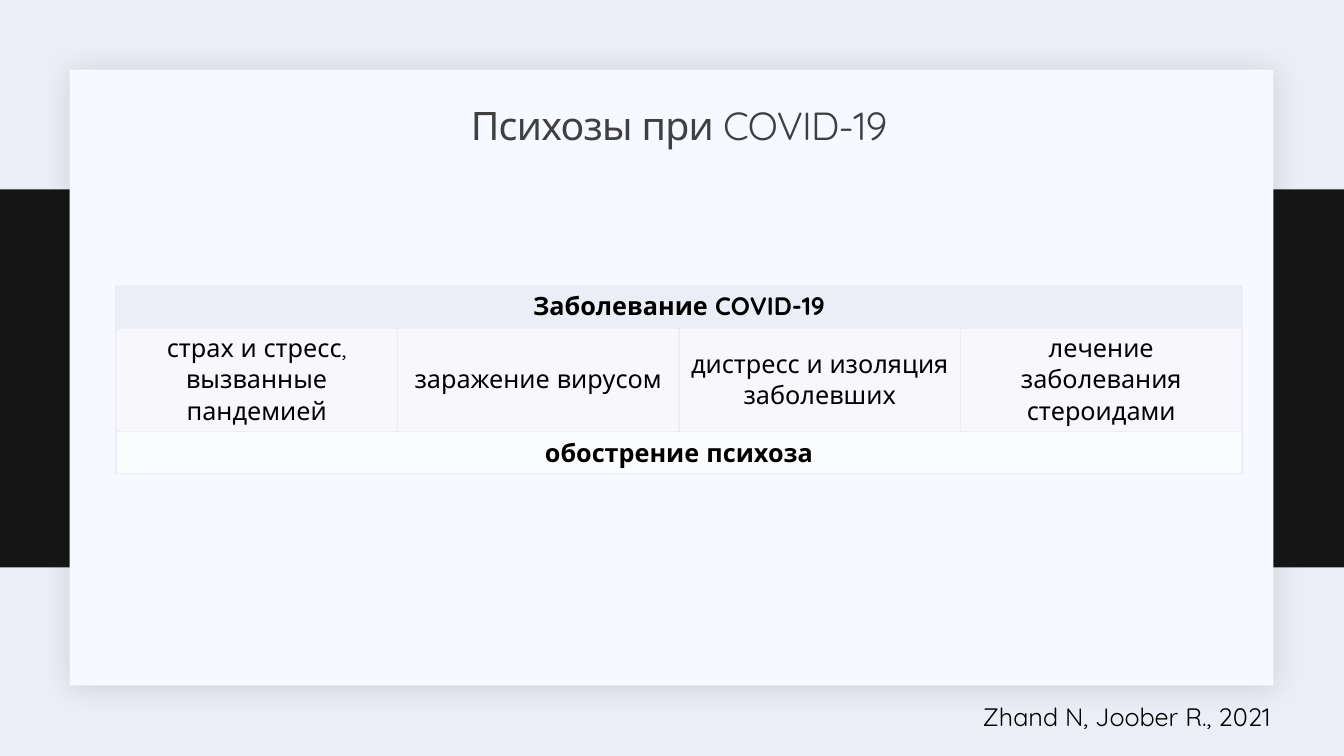
from lxml.etree import SubElement
from pptx import Presentation
from pptx.dml.color import RGBColor
from pptx.enum.shapes import MSO_SHAPE
from pptx.enum.text import MSO_ANCHOR, MSO_AUTO_SIZE, PP_ALIGN
from pptx.oxml import parse_xml
from pptx.oxml.ns import nsdecls, qn
from pptx.util import Inches, Pt

PALE = "ECEEF7"


def color(value):
    return RGBColor.from_string(value)


def add_text(frame, text, size, value, align, bold=False):
    paragraph = frame.paragraphs[0]
    paragraph.alignment = align
    run = paragraph.add_run()
    run.text = text
    run.font.name = "Quicksand"
    run.font.size = Pt(size)
    run.font.bold = bold
    run.font.color.rgb = color(value)
    return paragraph, run


presentation = Presentation()
presentation.slide_width = Inches(13.33)
presentation.slide_height = Inches(7.5)
slide = presentation.slides.add_slide(presentation.slide_layouts[5])
slide.background.fill.solid()
slide.background.fill.fore_color.rgb = color(PALE)

panels = [
    (0, 1.88, 13.33, 3.75, "141514"),
    (0.69, 0.69, 11.94, 6.11, "F6F9FF"),
]
for left, top, width, height, fill in panels:
    panel = slide.shapes.add_shape(
        MSO_SHAPE.RECTANGLE, Inches(left), Inches(top), Inches(width), Inches(height)
    )
    panel.shadow.inherit = False
    panel.fill.solid()
    panel.fill.fore_color.rgb = color(fill)
    panel.line.fill.background()

effects = panel.element.spPr.find(qn("a:effectLst"))
effects.append(parse_xml(
    f'<a:outerShdw {nsdecls("a")} blurRad="{Pt(20)}" dist="{Pt(2)}" dir="2700000" '
    'algn="ctr" rotWithShape="0"><a:srgbClr val="1F2125"><a:alpha val="15000"/>'
    '</a:srgbClr></a:outerShdw>'
))

citation = slide.shapes.add_textbox(Inches(5.58), Inches(6.91), Inches(7.12), Inches(0.4))
citation.text_frame.word_wrap = True
citation.text_frame.auto_size = MSO_AUTO_SIZE.SHAPE_TO_FIT_TEXT
add_text(citation.text_frame, "Zhand N, Joober R., 2021", 18, "000000", PP_ALIGN.RIGHT)

title = slide.shapes.title
title.left, title.top = Inches(1.31), Inches(0.71)
title.width, title.height = Inches(10.85), Inches(1.11)
title.text_frame.auto_size = MSO_AUTO_SIZE.NONE
title.text_frame.vertical_anchor = MSO_ANCHOR.MIDDLE
paragraph, run = add_text(
    title.text_frame, "Психозы при COVID-19", 28, "404040", PP_ALIGN.CENTER
)
paragraph.line_spacing = 0.9
run.font._element.set("spc", "-50")
title.element.getparent().append(title.element)

rows = [
    (0.41, PALE, True, ["Заболевание COVID-19"]),
    (1.03, "F8F8FC", False, [
        "страх и стресс, вызванные пандемией",
        "заражение вирусом",
        "дистресс и изоляция заболевших",
        "лечение заболевания стероидами",
    ]),
    (0.41, "FBFCFD", True, ["обострение психоза"]),
]
table = slide.shapes.add_table(
    len(rows), 4, Inches(1.15), Inches(2.83), Inches(11.17), Inches(1.85)
).table
for row_index, (height, fill, bold, texts) in enumerate(rows):
    table.rows[row_index].height = Inches(height)
    for column_index in range(4):
        cell = table.cell(row_index, column_index)
        properties = cell._tc.get_or_add_tcPr()
        for side in "LRTB":
            heavy = (row_index, side) in [(0, "B"), (1, "T")]
            border = SubElement(properties, qn(f"a:ln{side}"), w=str(Pt(3 if heavy else 1)))
            border_fill = SubElement(border, qn("a:solidFill"))
            SubElement(border_fill, qn("a:srgbClr"), val=PALE)
        cell.fill.solid()
        cell.fill.fore_color.rgb = color(fill)
        cell.vertical_anchor = MSO_ANCHOR.MIDDLE
    if len(texts) == 1:
        table.cell(row_index, 0).merge(table.cell(row_index, 3))
    for column_index, text in enumerate(texts):
        frame = table.cell(row_index, column_index).text_frame
        add_text(frame, text, 18, "000000", PP_ALIGN.CENTER, bold)

presentation.save("out.pptx")
